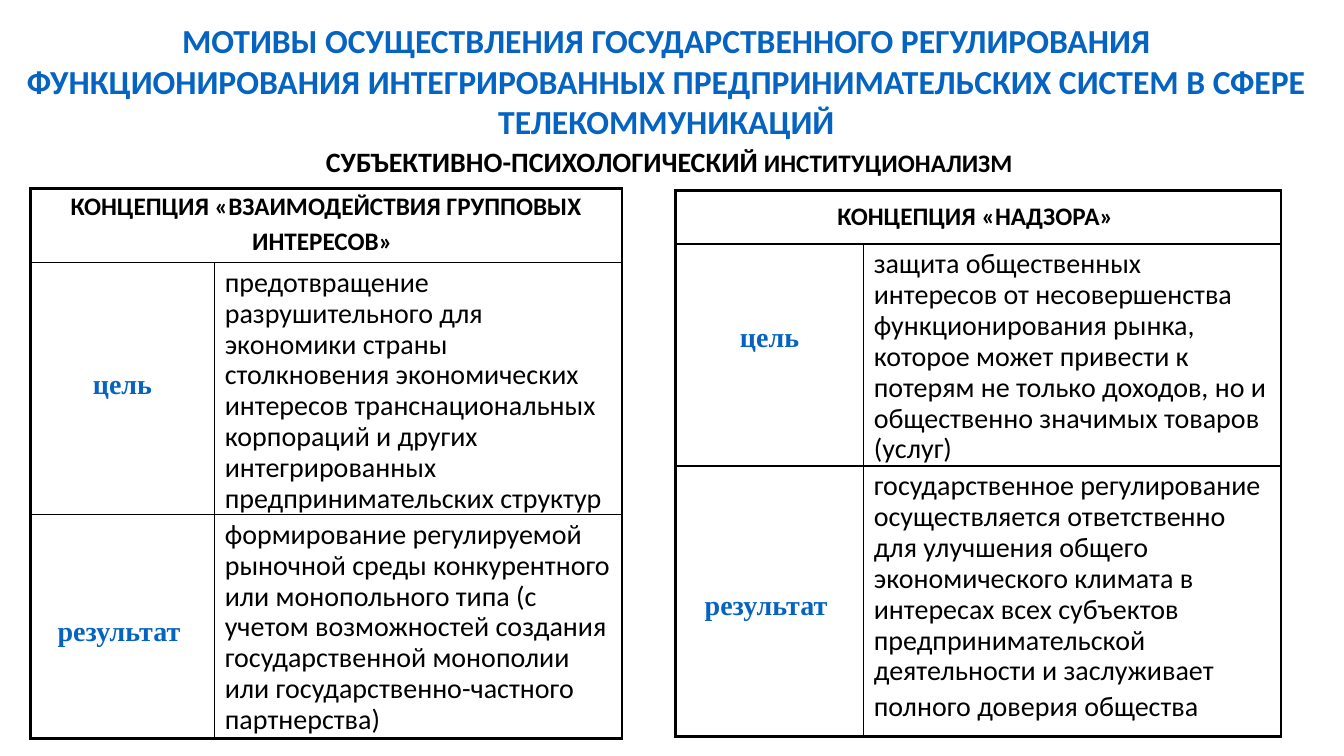
"""Build a slide that compares two concepts of state regulation in two tables."""
from lxml import etree
from pptx import Presentation
from pptx.dml import color
from pptx.enum import text
from pptx.oxml import ns
from pptx.util import Pt

COLORS = {"accent": "0563C1", "ink": "000000"}
TITLE = (
    "МОТИВЫ ОСУЩЕСТВЛЕНИЯ ГОСУДАРСТВЕННОГО РЕГУЛИРОВАНИЯ ФУНКЦИОНИРОВАНИЯ "
    "ИНТЕГРИРОВАННЫХ ПРЕДПРИНИМАТЕЛЬСКИХ СИСТЕМ В СФЕРЕ ТЕЛЕКОММУНИКАЦИЙ"
)
SUBTITLE = [("СУБЪЕКТИВНО-ПСИХОЛОГИЧЕСКИЙ", 20), (" ИНСТИТУЦИОНАЛИЗМ", 18)]
CONCEPTS = [
    {
        "position": (21.6, 134.6),
        "columns": (131.8, 290.9),
        "rows": (53, 180, 160),
        "header": [("КОНЦЕПЦИЯ «ВЗАИМОДЕЙСТВИЯ ГРУППОВЫХ ИНТЕРЕСОВ»", 18), (" ", 24)],
        "goal": [(
            "предотвращение разрушительного для экономики страны столкновения "
            "экономических интересов транснациональных корпораций и других "
            "интегрированных предпринимательских структур", 20)],
        "result": [(
            "формирование регулируемой рыночной среды конкурентного или "
            "монопольного типа (с учетом возможностей создания государственной "
            "монополии или государственно-частного партнерства)", 20)],
        "goal_margins": (0, 4),
    },
    {
        "position": (482.4, 136.3),
        "columns": (134.6, 298.1),
        "rows": (38, 158.6, 193),
        "header": [("КОНЦЕПЦИЯ «НАДЗОРА» ", 18)],
        "goal": [(
            "защита общественных интересов от несовершенства функционирования "
            "рынка, которое может привести к потерям не только доходов, но и "
            "общественно значимых товаров (услуг)", 20)],
        "result": [(
            "государственное регулирование осуществляется ответственно для "
            "улучшения общего экономического климата в интересах всех субъектов "
            "предпринимательской деятельности и заслуживает полного доверия "
            "общества", 20), (" ", 24)],
        "goal_margins": (0, 23),
    },
]
OUTER, INNER = 2.25, 1
RESULT_MARGINS = (9, 0)
BODY_MARGINS = (3.6, 0)


def write(frame, runs, font_name="Calibri", tint="ink", bold=True, centered=True, spacing=None):
    """Fill the first paragraph of a text frame with sized runs."""
    paragraph = frame.paragraphs[0]
    paragraph.alignment = text.PP_ALIGN.CENTER if centered else text.PP_ALIGN.LEFT
    if spacing:
        paragraph.line_spacing = spacing
    paragraph.font.name = font_name
    paragraph.font.bold = bold
    paragraph.font.color.rgb = color.RGBColor.from_string(COLORS[tint])
    for words, size in runs:
        run = paragraph.add_run()
        run.text = words
        run.font.size = Pt(size)


def set_borders(cell, widths):
    """Draw the given sides of a cell and leave its fill empty."""
    properties = cell._tc.get_or_add_tcPr()
    for side, width in widths.items():
        line = etree.SubElement(properties, ns.qn("a:ln" + side), w=str(Pt(width)))
        fill = etree.SubElement(line, ns.qn("a:solidFill"))
        etree.SubElement(fill, ns.qn("a:srgbClr"), val=COLORS["ink"])
    cell.fill.background()


def add_concept(slide, concept):
    """Add one concept table."""
    columns, rows = concept["columns"], concept["rows"]
    left, top = concept["position"]
    table = slide.shapes.add_table(
        len(rows), len(columns), Pt(left), Pt(top), Pt(sum(columns)), Pt(sum(rows))
    ).table
    table.first_row = table.horz_banding = False
    for column, width in zip(table.columns, columns):
        column.width = Pt(width)
    for row, height in zip(table.rows, rows):
        row.height = Pt(height)
    table.cell(0, 0).merge(table.cell(0, 1))

    for row in range(len(rows)):
        for column in range(len(columns)):
            widths = {
                "L": INNER if column else OUTER,
                "R": OUTER if column or row == 0 else INNER,
                "T": INNER if row else OUTER,
                "B": OUTER if row == len(rows) - 1 else INNER,
            }
            cell = table.cell(row, column)
            if cell.is_spanned:
                del widths["L"]
            set_borders(cell, widths)

    header = table.cell(0, 0)
    header.vertical_anchor = text.MSO_ANCHOR.MIDDLE
    write(header.text_frame, concept["header"], spacing=0.9)
    entries = [
        ("цель", concept["goal"], concept["goal_margins"]),
        ("результат ", concept["result"], RESULT_MARGINS),
    ]
    for row, (label, body, label_margins) in enumerate(entries, 1):
        label_cell, body_cell = table.cell(row, 0), table.cell(row, 1)
        label_cell.vertical_anchor = text.MSO_ANCHOR.MIDDLE
        label_cell.margin_top, label_cell.margin_bottom = map(Pt, label_margins)
        body_cell.margin_top, body_cell.margin_bottom = map(Pt, BODY_MARGINS)
        write(label_cell.text_frame, [(label, 20)], "Times New Roman", "accent", spacing=0.9)
        write(body_cell.text_frame, body, bold=False, centered=False, spacing=0.9)


def main():
    """Assemble and save the slide."""
    presentation = Presentation()
    presentation.slide_width, presentation.slide_height = Pt(960), Pt(540)
    slide = presentation.slides.add_slide(presentation.slide_layouts[5])

    title = slide.shapes.title
    title.left, title.top, title.width, title.height = Pt(5.8), Pt(10.8), Pt(940.3), Pt(93.6)
    title.text_frame.auto_size = text.MSO_AUTO_SIZE.NONE
    title.text_frame.vertical_anchor = text.MSO_ANCHOR.TOP
    write(title.text_frame, [(TITLE, 24)], tint="accent")

    subtitle = slide.shapes.add_textbox(Pt(35.3), Pt(99.4), Pt(885.6), Pt(31.7))
    subtitle.text_frame.word_wrap = True
    write(subtitle.text_frame, SUBTITLE)

    for concept in CONCEPTS:
        add_concept(slide, concept)
    presentation.save("out.pptx")


if __name__ == "__main__":
    main()
